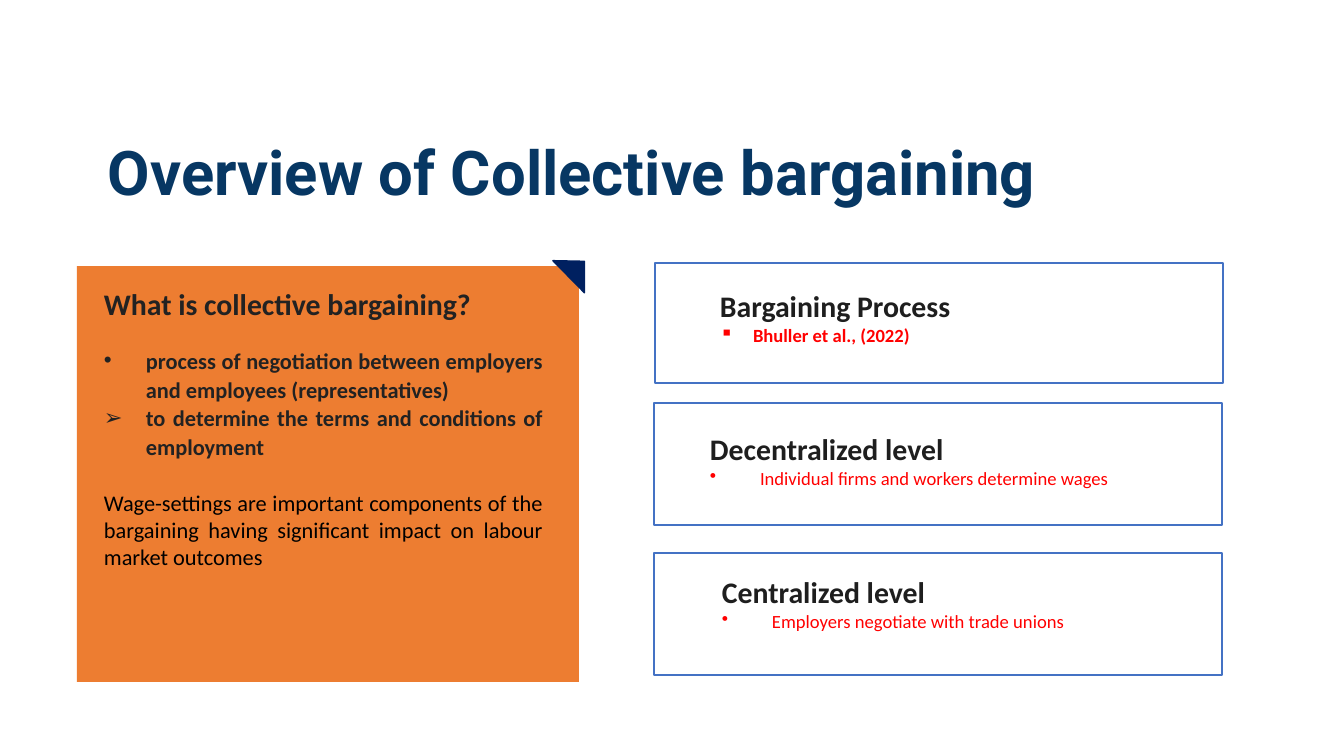
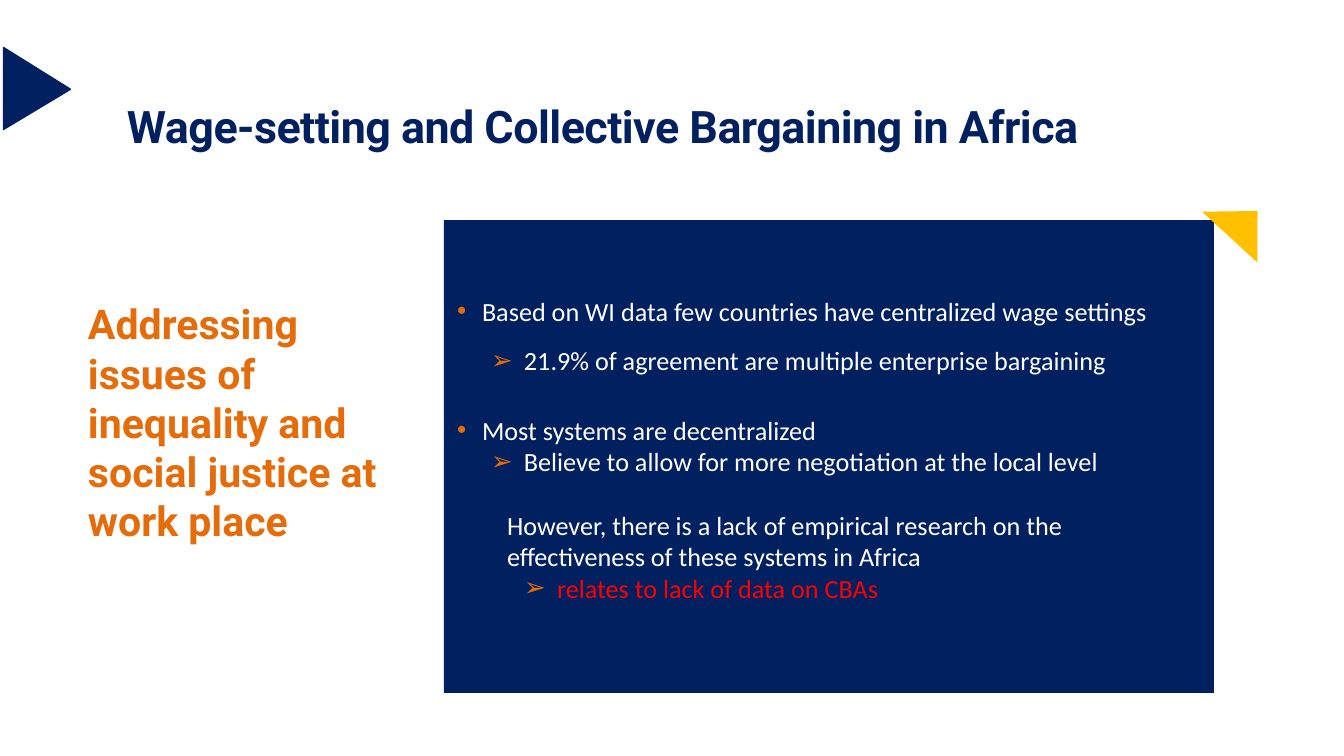
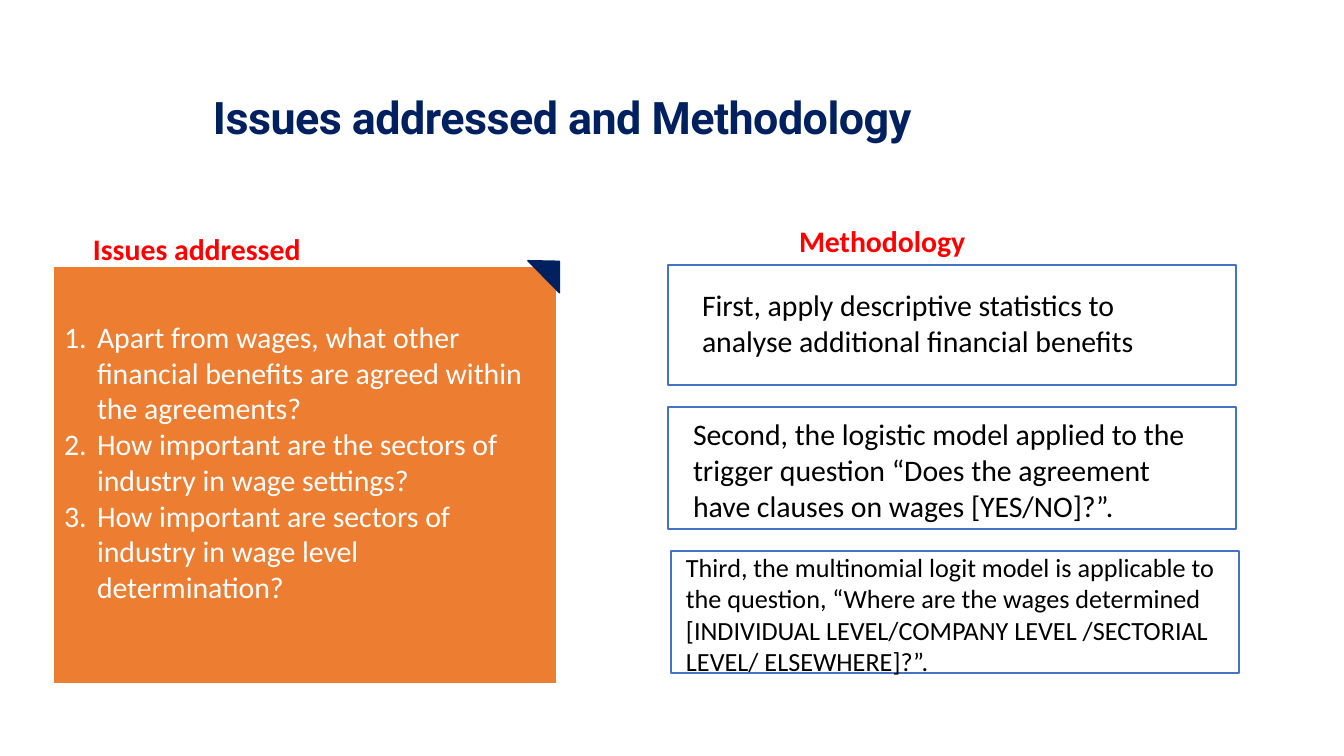
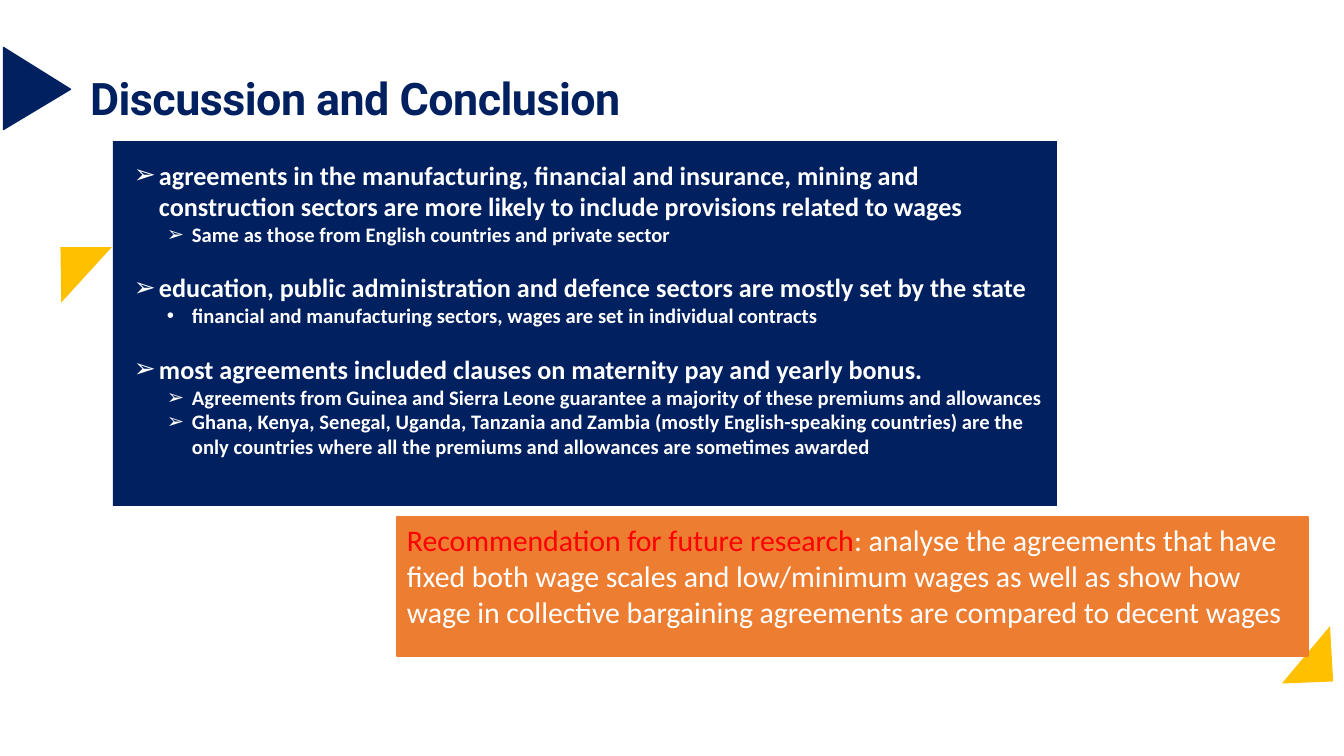
from lxml.etree import SubElement
from pptx import Presentation
from pptx.dml.color import RGBColor
from pptx.enum.shapes import MSO_SHAPE
from pptx.enum.text import MSO_ANCHOR, MSO_AUTO_SIZE, PP_ALIGN
from pptx.oxml.ns import qn
from pptx.util import Emu, Pt

SCALE = 914400 / 100.8  # EMU in one px
COLORS = {
    "navy": "002060", "title": "073763", "orange": "ED7D31", "accent": "E46C0A",
    "yellow": "FFC000", "blue": "4472C4", "red": "FF0000", "ink": "1E1E1E",
    "gray": "222222", "black": "000000", "white": "FFFFFF",
}


def style_shape(shape, box=None, fill=None, line=None):
    """Place a shape given as left, top, width, height in px and colour it."""
    if box:
        shape.left, shape.top, shape.width, shape.height = [
            Emu(round(length * SCALE)) for length in box]
    for part, color in ((shape.fill, fill), (shape.line.fill, line)):
        if color:
            part.solid()
            part.fore_color.rgb = RGBColor.from_string(COLORS[color])
        else:
            part.background()
    if line:
        shape.line.width = Pt(1)
    return shape


def write(shape, paragraphs, insets=(10, 5, 10, 5), anchor=MSO_ANCHOR.TOP):
    """Fill a shape with paragraphs; insets are left, top, right, bottom in px."""
    frame = shape.text_frame
    frame.word_wrap = True
    frame.auto_size = MSO_AUTO_SIZE.NONE
    frame.vertical_anchor = anchor
    (frame.margin_left, frame.margin_top,
     frame.margin_right, frame.margin_bottom) = [Emu(round(i * SCALE)) for i in insets]
    frame.text = "\n".join(item["text"] for item in paragraphs)
    for paragraph, item in zip(frame.paragraphs, paragraphs):
        paragraph.level = item.get("level", 0)
        paragraph.alignment = item.get("align", PP_ALIGN.LEFT)
        paragraph.line_spacing = item.get("spacing", 1.0)
        paragraph.space_before = Pt(item.get("before", 0))
        paragraph.space_after = Pt(0)
        # Indents and bullet
        properties = paragraph._p.get_or_add_pPr()
        properties.set("marL", str(round(item.get("left", 0) * SCALE)))
        properties.set("indent", str(-round(item.get("hang", 0) * SCALE)))
        bullet = item.get("bullet")
        if "bullet_color" in item:
            bullet_color = SubElement(properties, qn("a:buClr"))
            SubElement(bullet_color, qn("a:srgbClr"), val=COLORS[item["bullet_color"]])
        if bullet == "number":
            SubElement(properties, qn("a:buAutoNum"), type="arabicPeriod")
        elif bullet:
            SubElement(properties, qn("a:buChar"), char=bullet)
        else:
            SubElement(properties, qn("a:buNone"))
        # Characters
        for run in paragraph.runs:
            run.font.name = item.get("font", "Calibri")
            run.font.size = Pt(item["size"])
            run.font.bold = item.get("bold", False)
            run.font.color.rgb = RGBColor.from_string(COLORS[item["color"]])
            if "tracking" in item:
                run._r.get_or_add_rPr().set("spc", str(item["tracking"]))


presentation = Presentation()
presentation.slide_width = Emu(round(1344 * SCALE))
presentation.slide_height = Emu(round(756 * SCALE))

# Slides with title and body panel: title text, title box, title look, panel box, colour
title_look = {"font": "Roboto", "bold": True, "size": 32, "color": "navy", "tracking": -40}
large_look = {"font": "Roboto", "bold": True, "size": 44, "color": "title", "spacing": 0.9}
slides = []
for text, title_box, look, panel_box, panel_color in (
    ("Overview of Collective bargaining", (108, 142, 1236, 100), large_look,
     (77, 266, 502, 416), "orange"),
    ("Wage-setting and Collective Bargaining in Africa", (127, 99, 1207, 100), title_look,
     (444, 220, 770, 473), "navy"),
    ("Issues addressed and Methodology", (213, 96, 830, 100), title_look | {"spacing": 0.9},
     (54, 267, 502, 416), "orange"),
    ("Discussion and Conclusion", (90, 71, 1207, 66), title_look,
     (113, 141, 944, 365), "navy"),
):
    slide = presentation.slides.add_slide(presentation.slide_layouts[1])
    style_shape(slide.shapes.title, title_box)
    write(slide.shapes.title, [look | {"text": text}], (0, 0, 0, 0))
    style_shape(slide.placeholders[1], panel_box, panel_color)
    slides.append(slide)
overview, africa, issues, conclusion = slides
overview_panel, africa_panel, issues_panel, conclusion_panel = [
    slide.placeholders[1] for slide in slides]

# Slide 1: definition panel
definition = {"size": 16, "color": "gray", "bold": True, "spacing": 1.07,
              "align": PP_ALIGN.JUSTIFY, "left": 42, "hang": 42}
write(overview_panel, [
    {"text": "What is collective bargaining?", "size": 21.3, "color": "gray",
     "bold": True, "spacing": 1.07},
    definition | {"text": "process of negotiation between employers and employees "
                          "(representatives)", "bullet": "•", "before": 17},
    definition | {"text": "to determine the terms and conditions of employment",
                  "bullet": "➢"},
    {"text": "Wage-settings are important components of the bargaining having "
             "significant impact on labour market outcomes",
     "size": 16, "color": "black", "align": PP_ALIGN.JUSTIFY, "before": 21},
], (27, 17, 36, 5))

# Slide 1: cards with heading and one point
for box, insets, heading, point, bullet, indent, bold in (
    ((655, 263, 568, 120), (65, 25, 10, 5),
     "Bargaining Process", "Bhuller et al., (2022)", "▪", 33, True),
    ((654, 403, 568, 122), (56, 28, 10, 5),
     "Decentralized level", "Individual firms and workers determine wages", "•", 50, False),
    ((654, 553, 568, 122), (68, 21, 10, 5),
     "Centralized level", "Employers negotiate with trade unions", "•", 50, False),
):
    card = overview.shapes.add_shape(MSO_SHAPE.RECTANGLE, 0, 0, 0, 0)
    card.shadow.inherit = False
    style_shape(card, box, line="blue")
    write(card, [
        {"text": heading, "size": 21.3, "color": "ink", "bold": True},
        {"text": point, "size": 13.3, "color": "red", "bold": bold,
         "bullet": bullet, "left": indent, "hang": indent},
    ], insets)

# Slide 2: side statement and list
statement = style_shape(africa.shapes.add_textbox(0, 0, 0, 0), (78, 294, 336, 259))
write(statement, [{"text": "Addressing issues of inequality and social justice at work place",
                   "font": "Roboto", "size": 29.3, "color": "accent", "bold": True}])

plain = {"size": 18.7, "color": "white"}
main_point = plain | {"bullet": "•", "bullet_color": "accent", "left": 25, "hang": 25}
sub_point = plain | {"bullet": "➢", "bullet_color": "accent", "left": 67, "hang": 33,
                     "level": 1}
write(africa_panel, [
    main_point | {"text": "Based on WI data few countries have centralized wage settings"},
    sub_point | {"text": "21.9% of agreement are multiple enterprise bargaining",
                 "before": 13},
    main_point | {"text": "Most systems are decentralized", "before": 27},
    sub_point | {"text": "Believe to allow for more negotiation at the local level"},
    plain | {"text": "However, there is a lack of empirical research on the effectiveness "
                     "of these systems in Africa", "level": 1, "left": 50, "before": 23},
    sub_point | {"text": "relates to lack of data on CBAs", "color": "red", "level": 2,
                 "left": 100},
], (13, 75, 13, 5))

# Slide 3: numbered questions
write(issues_panel, [
    {"text": text, "size": 21.3, "color": "white", "bullet": "number", "left": 33, "hang": 33}
    for text in (
        "Apart from wages, what other financial benefits are agreed within the agreements?",
        "How important are the sectors of industry in wage settings?",
        "How important are sectors of industry in wage level determination?",
    )
], (10, 5, 10, 32), MSO_ANCHOR.MIDDLE)

# Slide 3: column labels
for text, left, top in (("Issues addressed", 83, 223), ("Methodology", 789, 215)):
    label = style_shape(issues.shapes.add_textbox(0, 0, 0, 0), (left, top, 435, 47))
    write(label, [{"text": text, "size": 21.3, "color": "red", "bold": True,
                   "spacing": 1.07}])

# Slide 3: method cards
for box, insets, size, text in (
    ((668, 265, 568, 120), (34, 22, 69, 5), 21.3,
     "First, apply descriptive statistics to analyse additional financial benefits"),
    ((668, 407, 568, 122), (25, 9, 43, 0), 21.3,
     "Second, the logistic model applied to the trigger question “Does the agreement "
     "have clauses on wages [YES/NO]?”."),
    ((671, 551, 568, 122), (15, 0, 10, 0), 18.7,
     "Third, the multinomial logit model is applicable to the question, “Where are the "
     "wages determined [INDIVIDUAL LEVEL/COMPANY LEVEL /SECTORIAL LEVEL/ ELSEWHERE]?”."),
):
    card = issues.shapes.add_shape(MSO_SHAPE.RECTANGLE, 0, 0, 0, 0)
    card.shadow.inherit = False
    style_shape(card, box, line="blue")
    write(card, [{"text": text, "size": size, "color": "black"}], insets)

# Slide 4: findings
finding = {"size": 18.7, "color": "white", "bold": True, "bullet": "➢",
           "left": 25, "hang": 25}
detail = finding | {"size": 14.7, "left": 58, "level": 1}
write(conclusion_panel, [
    finding | {"text": "agreements in the manufacturing, financial and insurance, mining and "
                       "construction sectors are more likely to include provisions related "
                       "to wages"},
    detail | {"text": "Same as those from English countries and private sector"},
    finding | {"text": "education, public administration and defence sectors are mostly set "
                       "by the state", "before": 18},
    detail | {"text": "financial and manufacturing sectors, wages are set in individual "
                      "contracts", "bullet": "•"},
    finding | {"text": "most agreements included clauses on maternity pay and yearly bonus.",
               "before": 18},
    detail | {"text": "Agreements from Guinea and Sierra Leone guarantee a majority of these "
                      "premiums and allowances"},
    detail | {"text": "Ghana, Kenya, Senegal, Uganda, Tanzania and Zambia (mostly "
                      "English-speaking countries) are the only countries where all the "
                      "premiums and allowances are sometimes awarded"},
], (21, 18, 0, 5))

# Triangles: slide, box, rotation, apex position, colour, line
side_box = (-4, 55, 82, 67)
for slide, box, rotation, apex, color, line in (
    (overview, (554, 258, 45, 22), 45.5, 0.5, "navy", "navy"),
    (africa, side_box, 90, 0.51, "navy", "navy"),
    (africa, (1205, 204, 75, 38), 42.5, 0.54, "yellow", None),
    (issues, (529, 258, 45, 22), 45.5, 0.5, "navy", "navy"),
    (conclusion, side_box, 90, 0.51, "navy", "navy"),
    (conclusion, (35, 243, 75, 38), 312.4, 0.54, "yellow", None),
    (conclusion, (1283, 648, 75, 38), 130, 0.54, "yellow", None),
):
    triangle = slide.shapes.add_shape(MSO_SHAPE.ISOSCELES_TRIANGLE, 0, 0, 0, 0)
    triangle.shadow.inherit = False
    style_shape(triangle, box, color, line)
    triangle.rotation = rotation
    triangle.adjustments[0] = apex

# Slide 4: recommendation, in front of the corner triangle
recommendation = conclusion.shapes.add_shape(MSO_SHAPE.RECTANGLE, 0, 0, 0, 0)
recommendation.shadow.inherit = False
style_shape(recommendation, (397, 517, 911, 139), "orange", "orange")
write(recommendation, [{"text": "Recommendation for future research", "size": 21.3,
                        "color": "red"}])
advice = recommendation.text_frame.paragraphs[0].add_run()
advice.text = (": analyse the agreements that have fixed both wage scales and low/minimum "
               "wages as well as show how wage in collective bargaining agreements are "
               "compared to decent wages")
advice.font.name = "Calibri"
advice.font.size = Pt(21.3)
advice.font.color.rgb = RGBColor.from_string(COLORS["white"])

presentation.save("out.pptx")
